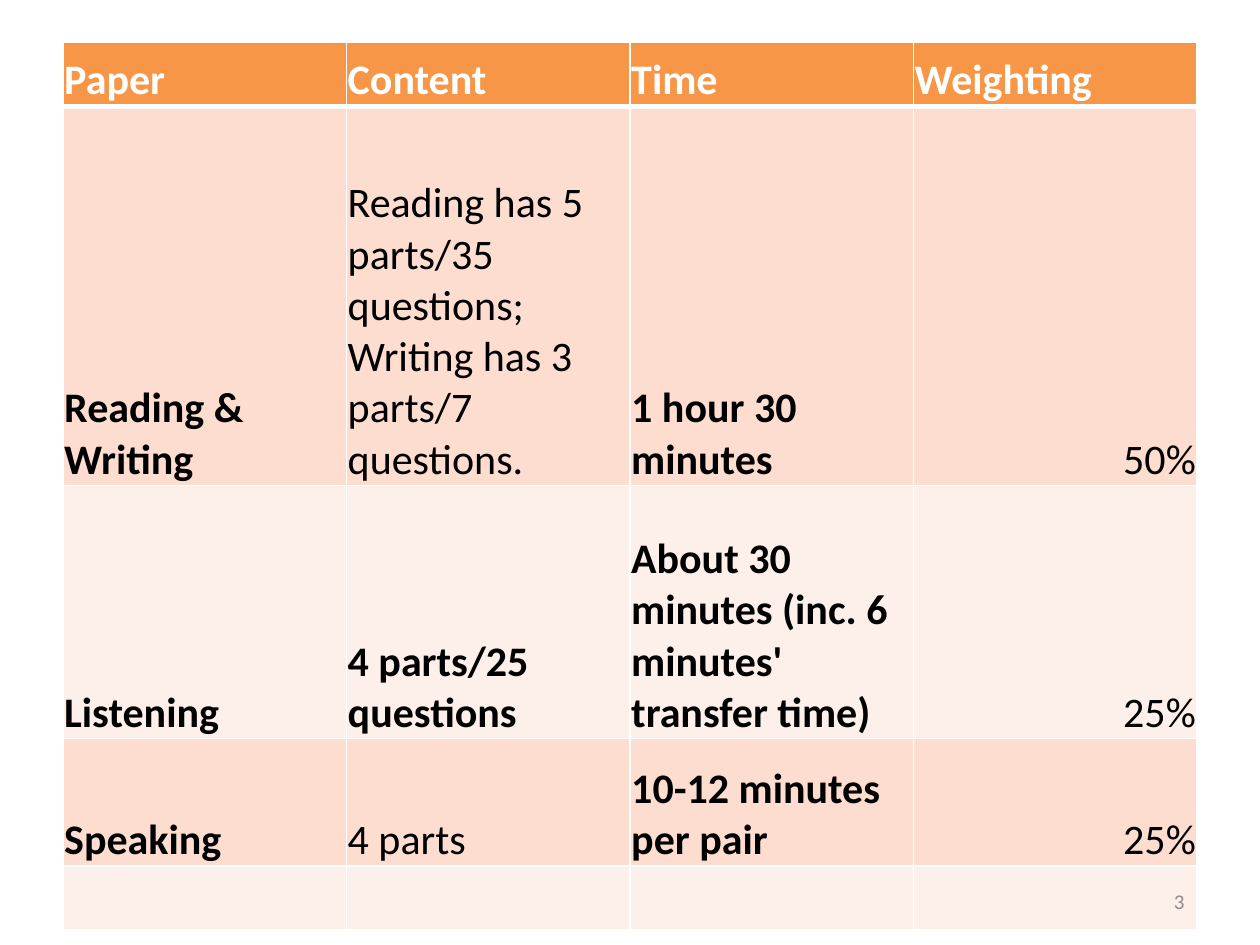
import lxml.etree
import pptx
import pptx.dml.color
import pptx.enum.text
import pptx.oxml.ns
import pptx.util

Pt = pptx.util.Pt
RGBColor = pptx.dml.color.RGBColor
Align = pptx.enum.text.PP_ALIGN
Anchor = pptx.enum.text.MSO_ANCHOR

WHITE = RGBColor(0xFF, 0xFF, 0xFF)
BLACK = RGBColor(0, 0, 0)
GRAY = RGBColor(0x8C, 0x8C, 0x8C)
ORANGE = RGBColor(0xF7, 0x96, 0x46)
PEACH = RGBColor(0xFC, 0xDD, 0xCF)
PALE_PEACH = RGBColor(0xFD, 0xEF, 0xE9)

HEADER = ["Paper", "Content", "Time", "Weighting"]
PAPERS = [
    ["Reading & Writing",
     "Reading has 5 parts/35 questions; Writing has 3 parts/7 questions.",
     "1 hour 30 minutes", "50%"],
    ["Listening", "4 parts/25 questions",
     "About 30 minutes (inc. 6 minutes' transfer time)", "25%"],
    ["Speaking", "4 parts", "10-12 minutes per pair", "25%"],
    ["", "", "", ""],
]
REGULAR_CELLS = {(1, 1), (3, 1)}
ROW_HEIGHTS = [36.72, 216.72, 144.72, 72.72, 36.72]
COLUMN_WIDTH = 162


def write_text(text_frame, text, *, size, color, font="Calibri", bold=False,
               align=Align.LEFT):
    paragraph = text_frame.paragraphs[0]
    paragraph.alignment = align
    run = paragraph.add_run()
    run.text = text
    run.font.name = font
    run.font.size = Pt(size)
    run.font.bold = bold
    run.font.color.rgb = color


class SlideBuilder:
    def __init__(self, slide, text_size=24, border_color=WHITE):
        self.slide = slide
        self.text_size = text_size
        self.border_color = border_color

    def border(self, cell, side, width):
        properties = cell._tc.get_or_add_tcPr()
        qn = pptx.oxml.ns.qn
        line = lxml.etree.SubElement(properties, qn(f"a:ln{side}"), w=str(Pt(width)))
        fill = lxml.etree.SubElement(line, qn("a:solidFill"))
        lxml.etree.SubElement(fill, qn("a:srgbClr"), val=str(self.border_color))

    def cell(self, cell, text, fill, row, **text_format):
        cell.vertical_anchor = Anchor.BOTTOM
        cell.margin_left = cell.margin_right = cell.margin_top = Pt(0.72)
        cell.margin_bottom = 0
        widths = {"L": 1, "R": 1, "T": 3 if row == 1 else 1, "B": 3 if row == 0 else 1}
        for side, width in widths.items():
            self.border(cell, side, width)
        cell.fill.solid()
        cell.fill.fore_color.rgb = fill
        if text:
            write_text(cell.text_frame, text, size=self.text_size, **text_format)

    def table(self, rows, left, top):
        frame = self.slide.shapes.add_table(
            len(rows), len(HEADER), Pt(left), Pt(top),
            Pt(COLUMN_WIDTH * len(HEADER)), Pt(sum(ROW_HEIGHTS)))
        table = frame.table
        for column in table.columns:
            column.width = Pt(COLUMN_WIDTH)
        for row, texts in enumerate(rows):
            table.rows[row].height = Pt(ROW_HEIGHTS[row])
            is_header = row == 0
            fill = ORANGE if is_header else (PEACH if row % 2 else PALE_PEACH)
            for column, text in enumerate(texts):
                is_weighting = column == 3 and not is_header
                self.cell(
                    table.cell(row, column), text, fill, row,
                    color=WHITE if is_header else BLACK,
                    bold=not is_weighting and (row, column) not in REGULAR_CELLS,
                    align=Align.RIGHT if is_weighting else Align.LEFT)

    def text_box(self, text, left, top, width, height, **text_format):
        shape = self.slide.shapes.add_textbox(Pt(left), Pt(top), Pt(width), Pt(height))
        shape.text_frame.word_wrap = True
        shape.text_frame.vertical_anchor = Anchor.MIDDLE
        write_text(shape.text_frame, text, **text_format)


def main():
    presentation = pptx.Presentation()
    presentation.slide_width = Pt(720)
    presentation.slide_height = Pt(540)
    slide = presentation.slides.add_slide(presentation.slide_layouts[6])
    builder = SlideBuilder(slide)
    builder.table([HEADER] + PAPERS, 36, 24)
    builder.text_box("3", 516, 500.5, 168, 28.75, size=12, color=GRAY, align=Align.RIGHT)
    presentation.save("out.pptx")


if __name__ == "__main__":
    main()
